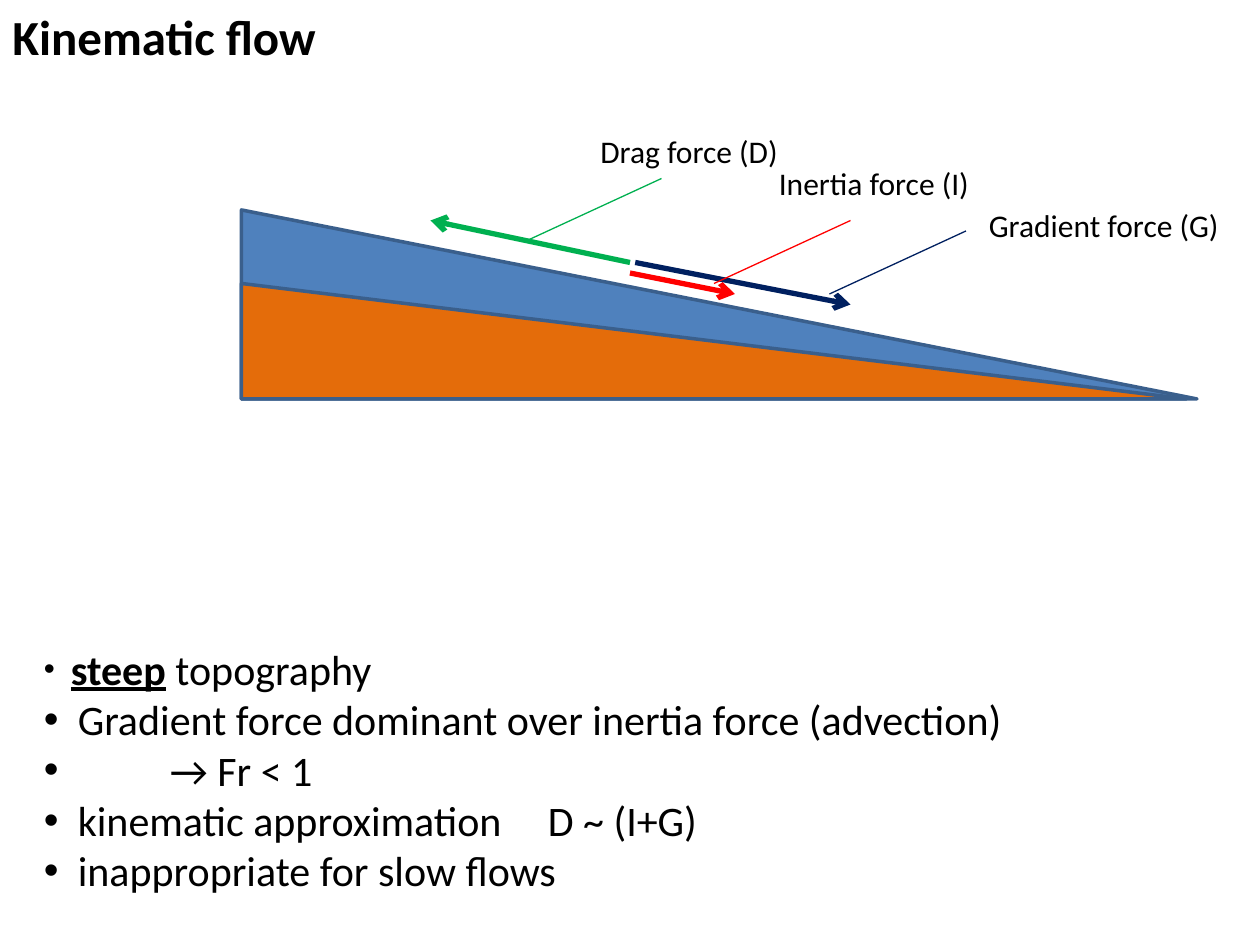
import pptx
import pptx.dml.color
import pptx.enum.shapes
import pptx.enum.text
import pptx.oxml.ns
import pptx.util
from lxml import etree

Pt = pptx.util.Pt
qn = pptx.oxml.ns.qn

BLACK, RED, NAVY, GREEN = "000000", "FF0000", "002060", "00B050"
WATER, GROUND, OUTLINE = "4F81BD", "E46C0A", "3A5F8C"


def colour(hex_value):
    return pptx.dml.color.RGBColor.from_string(hex_value)


def add_wedge(slide, left, top, width, height, fill):
    wedge = slide.shapes.add_shape(
        pptx.enum.shapes.MSO_SHAPE.RIGHT_TRIANGLE,
        Pt(left), Pt(top), Pt(width), Pt(height))
    wedge.shadow.inherit = False
    wedge.fill.solid()
    wedge.fill.fore_color.rgb = colour(fill)
    wedge.line.color.rgb = colour(OUTLINE)
    wedge.line.width = Pt(2)


def add_line(slide, start, end, hex_value, weight, arrow=False):
    line = slide.shapes.add_connector(
        pptx.enum.shapes.MSO_CONNECTOR.STRAIGHT,
        *(Pt(value) for value in (*start, *end)))
    line.line.color.rgb = colour(hex_value)
    line.line.width = Pt(weight)
    if arrow:
        etree.SubElement(line.line._get_or_add_ln(), qn("a:tailEnd"), type="arrow")
    etree.SubElement(line._element.spPr, qn("a:effectLst"))


def add_text_frame(slide, left, top, width, height, wrap=False):
    box = slide.shapes.add_textbox(Pt(left), Pt(top), Pt(width), Pt(height))
    frame = box.text_frame
    frame.word_wrap = wrap
    frame.auto_size = pptx.enum.text.MSO_AUTO_SIZE.SHAPE_TO_FIT_TEXT
    return frame


def add_run(paragraph, text, **font_format):
    run = paragraph.add_run()
    run.text = text
    run.font.color.rgb = colour(BLACK)
    for attribute, value in {"name": "Calibri", **font_format}.items():
        setattr(run.font, attribute, value)


def add_label(slide, text, left, top, width, height=28.8, **font_format):
    frame = add_text_frame(slide, left, top, width, height)
    add_run(frame.paragraphs[0], text, **{"size": Pt(18), **font_format})


def set_bullet(paragraph, indent, size_percent=100, tab=None):
    properties = paragraph._p.get_or_add_pPr()
    properties.set("marL", str(Pt(indent)))
    properties.set("indent", str(-Pt(indent)))
    etree.SubElement(properties, qn("a:buSzPct"), val=str(size_percent * 1000))
    etree.SubElement(properties, qn("a:buFont"), typeface="Arial")
    etree.SubElement(properties, qn("a:buChar"), char="•")
    if tab:
        tabs = etree.SubElement(properties, qn("a:tabLst"))
        etree.SubElement(tabs, qn("a:tab"), pos=str(Pt(tab)), algn="l")


def add_findings(slide):
    frame = add_text_frame(slide, 18, 342, 651, 174, wrap=True)
    frame.margin_top = Pt(25.6)
    plain = {"size": Pt(24)}
    strong = {**plain, "bold": True, "underline": True}
    findings = [
        ([("steep", strong), (" topography", plain)],
         {"indent": 15.4, "size_percent": 75}),
        ([("Gradient force dominant over inertia force (advection)", plain)],
         {"indent": 19.4}),
        ([("→ Fr < 1", plain)], {"indent": 72}),
        ([("kinematic approximation\tD ~ (I+G)", plain)],
         {"indent": 19.4, "tab": 288}),
        ([("inappropriate for slow flows", plain)], {"indent": 19.4}),
    ]
    for index, (runs, bullet) in enumerate(findings):
        paragraph = frame.add_paragraph() if index else frame.paragraphs[0]
        set_bullet(paragraph, **bullet)
        for text, font_format in runs:
            add_run(paragraph, text, **font_format)


def main():
    presentation = pptx.Presentation()
    presentation.slide_width, presentation.slide_height = Pt(720), Pt(540)
    slide = presentation.slides.add_slide(presentation.slide_layouts[6])

    # Water layer over sloping ground
    add_wedge(slide, 138, 120, 546, 108, WATER)
    add_wedge(slide, 138, 162, 540, 66, GROUND)

    # Force arrows
    for start, end, hex_value in [
        ((360, 156), (420, 168), RED),
        ((363, 150), (486, 174), NAVY),
        ((360, 150), (246, 126), GREEN),
    ]:
        add_line(slide, start, end, hex_value, 3, arrow=True)

    # Leaders, all with the same slope, from label to arrow
    for x, y, hex_value in [(552, 132, NAVY), (486, 126, RED), (378, 102, GREEN)]:
        add_line(slide, (x, y), (x - 78, y + 36), hex_value, 0.75)

    # Force labels
    add_label(slide, "Drag force (D)", 336, 72, 117.4)
    add_label(slide, "Gradient force (G)", 558, 114, 147.6)
    add_label(slide, "Inertia force (I)", 438, 90, 124.6)

    # Findings and title
    add_findings(slide)
    add_label(slide, "Kinematic flow", 0, 0, 190, 63.4, size=Pt(28), bold=True)

    presentation.save("out.pptx")


if __name__ == "__main__":
    main()
